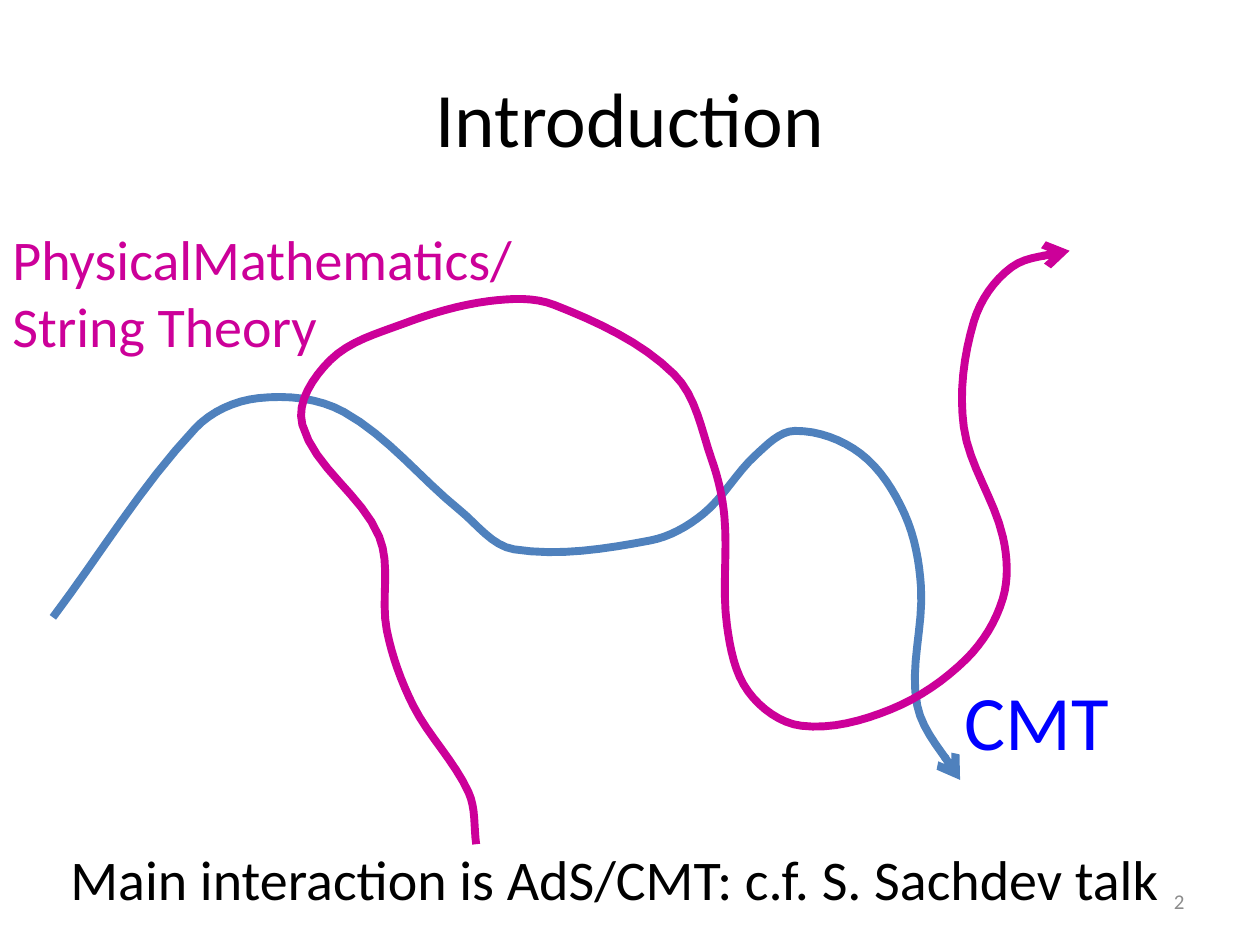
from dataclasses import dataclass
from math import dist

from lxml.etree import SubElement
from pptx import Presentation
from pptx.dml.color import RGBColor
from pptx.enum.text import MSO_ANCHOR as Anchor, MSO_AUTO_SIZE as AutoSize, PP_ALIGN as Align
from pptx.oxml.ns import qn
from pptx.slide import Slide
from pptx.util import Inches, Pt

COLORS = {
    "black": "000000",
    "gray": "8C8C8C",
    "steel": "4F81BD",
    "magenta": "CC0099",
    "blue": "0000FF",
}
FONT = "Calibri"
STEPS = 8
Point = tuple[float, float]


@dataclass(frozen=True)
class Label:
    lines: tuple[str, ...]
    left: float
    top: float
    width: float
    height: float
    size: int
    color: str
    align: Align = Align.LEFT
    anchor: Anchor = Anchor.TOP
    grows: bool = True


@dataclass(frozen=True)
class Trail:
    color: str
    points: tuple[Point, ...]


LABELS = (
    Label(("Introduction",), 0.5, 0.3, 9, 1.25, 44, "black",
          Align.CENTER, Anchor.MIDDLE, False),
    Label(("2",), 7.17, 6.95, 2.33, 0.4, 12, "gray",
          Align.RIGHT, Anchor.MIDDLE, False),
    Label(("Main interaction is AdS/CMT: c.f. S. Sachdev talk",),
          0.46, 6.65, 9.28, 0.64, 32, "black"),
    Label(("CMT",), 7.56, 5.3, 1.85, 0.84, 44, "blue"),
    Label(("PhysicalMathematics/", "String Theory"),
          0, 1.73, 4.24, 1.18, 32, "magenta"),
)

TRAILS = (
    Trail("steel", (
        (0.42, 4.9), (1.55, 3.4), (2.05, 3.16), (2.73, 3.27), (3.65, 4.05),
        (4.08, 4.36), (5.16, 4.29), (5.58, 4.08), (6, 3.61), (6.31, 3.42),
        (6.83, 3.6), (7.18, 4.08), (7.31, 4.66), (7.28, 5.6), (7.62, 6.19),
    )),
    Trail("magenta", (
        (3.78, 6.7), (3.72, 6.29), (3.28, 5.6), (3.07, 5), (3.01, 4.26),
        (2.4, 3.37), (2.62, 2.86), (3.2, 2.57), (3.88, 2.39), (4.4, 2.42),
        (5.35, 2.97), (5.65, 3.65), (5.75, 4.1), (5.77, 4.96), (5.94, 5.49),
        (6.36, 5.76), (7.07, 5.63), (7.67, 5.23), (7.96, 4.75), (7.96, 4.26),
        (7.65, 3.39), (7.73, 2.55), (8.03, 2.12), (8.49, 1.99),
    )),
)


def smooth(points: tuple[Point, ...]) -> list[Point]:
    """Sample a cubic spline through the points."""
    def direction(index: int) -> Point:
        before = points[max(index - 1, 0)]
        after = points[min(index + 1, len(points) - 1)]
        length = dist(before, after)
        return (after[0] - before[0]) / length, (after[1] - before[1]) / length

    curve = [points[0]]
    for index, (start, end) in enumerate(zip(points, points[1:])):
        reach = dist(start, end) / 3
        leave, arrive = direction(index), direction(index + 1)
        for step in range(1, STEPS + 1):
            t = step / STEPS
            u = 1 - t
            curve.append(tuple(
                u ** 3 * start[axis]
                + 3 * u * u * t * (start[axis] + reach * leave[axis])
                + 3 * u * t * t * (end[axis] - reach * arrive[axis])
                + t ** 3 * end[axis]
                for axis in (0, 1)
            ))
    return curve


def draw_trail(slide: Slide, trail: Trail) -> None:
    """Draw a smooth open outline ending in an arrowhead."""
    start, *rest = [(Inches(x), Inches(y)) for x, y in smooth(trail.points)]
    builder = slide.shapes.build_freeform(*start)
    builder.add_line_segments(rest, close=False)
    shape = builder.convert_to_shape()
    shape.shadow.inherit = False
    shape.fill.background()
    shape.line.color.rgb = RGBColor.from_string(COLORS[trail.color])
    shape.line.width = Pt(4.5)
    SubElement(shape.line._get_or_add_ln(), qn("a:tailEnd"), type="arrow")


def draw_label(slide: Slide, label: Label) -> None:
    """Draw a text box with one paragraph for each line."""
    shape = slide.shapes.add_textbox(
        Inches(label.left), Inches(label.top), Inches(label.width), Inches(label.height))
    frame = shape.text_frame
    frame.word_wrap = True
    frame.auto_size = AutoSize.SHAPE_TO_FIT_TEXT if label.grows else AutoSize.NONE
    frame.vertical_anchor = label.anchor
    frame.text = "\n".join(label.lines)
    for paragraph in frame.paragraphs:
        paragraph.alignment = label.align
        paragraph.font.name = FONT
        paragraph.font.size = Pt(label.size)
        paragraph.font.color.rgb = RGBColor.from_string(COLORS[label.color])


def main() -> None:
    """Build the slide and save it."""
    presentation = Presentation()
    presentation.slide_width, presentation.slide_height = Inches(10), Inches(7.5)
    slide = presentation.slides.add_slide(presentation.slide_layouts[6])
    for trail in TRAILS:
        draw_trail(slide, trail)
    for label in LABELS:
        draw_label(slide, label)
    presentation.save("out.pptx")


if __name__ == "__main__":
    main()
